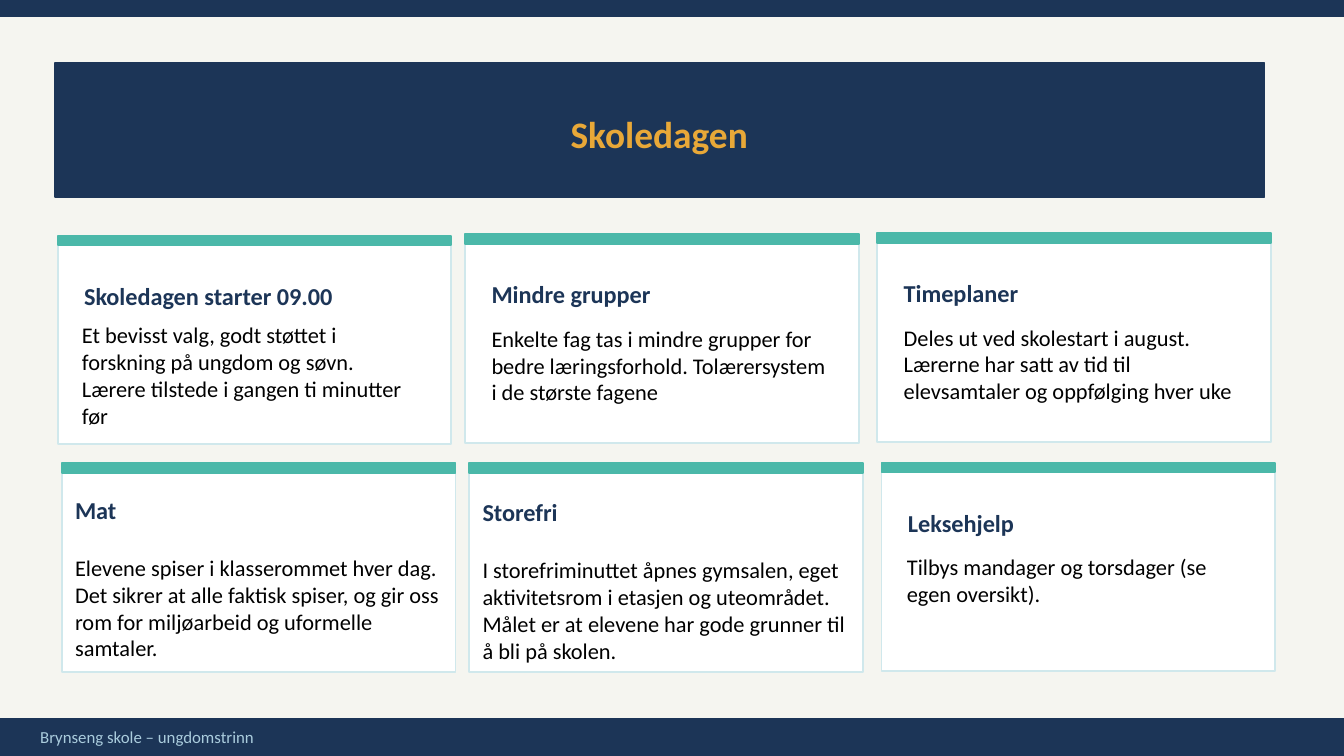
import pptx
import pptx.util
import pptx.dml.color
import pptx.enum.shapes
import pptx.enum.text

Cm, Pt = pptx.util.Cm, pptx.util.Pt
ANCHOR = pptx.enum.text.MSO_ANCHOR
ALIGN = pptx.enum.text.PP_ALIGN

# Content: one row of cards per list; "inside" cards hold their text in the frame
TITLE = "Skoledagen"
FOOTER = "Brynseng skole – ungdomstrinn"
CARDS = [
    [
        {"heading": "Skoledagen starter 09.00",
         "body": ["Et bevisst valg, godt støttet i forskning på ungdom og søvn.",
                  "Lærere tilstede i gangen ti minutter før"],
         "body_at": (0.46, 1.62)},
        {"heading": "Mindre grupper",
         "body": ["Enkelte fag tas i mindre grupper for bedre læringsforhold. "
                  "Tolærersystem i de største fagene"]},
        {"heading": "Timeplaner",
         "body": ["Deles ut ved skolestart i august.",
                  "Lærerne har satt av tid til elevsamtaler og oppfølging hver uke"]},
    ],
    [
        {"heading": "Mat",
         "body": ["Elevene spiser i klasserommet hver dag. Det sikrer at alle faktisk "
                  "spiser, og gir oss rom for miljøarbeid og uformelle samtaler."],
         "inside": 0.6},
        {"heading": "Storefri",
         "body": ["I storefriminuttet åpnes gymsalen, eget aktivitetsrom i etasjen og "
                  "uteområdet. Målet er at elevene har gode grunner til å bli på skolen."],
         "inside": 0.64},
        {"heading": "Leksehjelp",
         "body": ["Tilbys mandager og torsdager (se egen oversikt)."],
         "body_at": (0.48, 1.71)},
    ],
]

# Formats and layout in centimetres
NAVY, TEAL, WHITE, PALE = "1C3557", "4BB8A9", "FFFFFF", "D0E8EC"
FORMATS = {
    "title": {"size": Pt(20), "bold": True, "color": "E8A838"},
    "heading": {"size": Pt(13), "bold": True, "color": NAVY},
    "body": {"size": Pt(12), "bold": False, "color": "000000"},
    "footer": {"size": Pt(9), "bold": False, "color": "AACCDD"},
}
COLUMNS = [1.09, 8.79, 16.58]
ROW_SHIFT = 0.08
ROW_TOPS = [[4.46, 4.43, 4.41], [8.76, 8.76, 8.75]]
CARD_WIDTH, CARD_HEIGHT, BAR_HEIGHT = 7.44, 3.94, 0.18
HEADING_AT, BODY_AT = (0.5, 0.72), (0.5, 1.71)


def rgb(color):
    return pptx.dml.color.RGBColor.from_string(color)


def add_block(page, left, top, width, height, fill, line):
    block = page.shapes.add_shape(pptx.enum.shapes.MSO_SHAPE.RECTANGLE,
                                  Cm(left), Cm(top), Cm(width), Cm(height))
    block.shadow.inherit = False
    block.fill.solid()
    block.fill.fore_color.rgb = rgb(fill)
    block.line.color.rgb = rgb(line)
    block.line.width = Pt(1)
    return block


def write(frame, entries, anchor, insets, align=ALIGN.LEFT):
    """Fill a text frame with (text, format name, space before) entries."""
    frame.word_wrap = True
    frame.vertical_anchor = anchor
    for side, inset in zip(("left", "top", "right", "bottom"), insets):
        setattr(frame, f"margin_{side}", Cm(inset))
    for index, (text, style, space) in enumerate(entries):
        para = frame.paragraphs[0] if index == 0 else frame.add_paragraph()
        para.alignment = align
        if space:
            para.space_before = Pt(space)
        span = para.add_run()
        span.text = text
        span.font.name = "Calibri"
        for key, value in FORMATS[style].items():
            if key == "color":
                span.font.color.rgb = rgb(value)
            else:
                setattr(span.font, key, value)


def add_text(page, left, top, width, height, lines, style,
             anchor=ANCHOR.MIDDLE, align=ALIGN.LEFT):
    box = page.shapes.add_textbox(Cm(left), Cm(top), Cm(width), Cm(height))
    write(box.text_frame, [(line, style, 0) for line in lines],
          anchor, (0, 0, 0, 0), align)


def add_card(page, left, top, card):
    frame = add_block(page, left, top, CARD_WIDTH, CARD_HEIGHT, WHITE, PALE)
    add_block(page, left, top, CARD_WIDTH, BAR_HEIGHT, TEAL, TEAL)
    if "inside" in card:
        entries = [(card["heading"], "heading", 0)]
        entries += [(line, "body", 15.9) for line in card["body"]]
        write(frame.text_frame, entries, ANCHOR.TOP,
              (0.25, card["inside"], 0.25, 0.13))
        return
    dx, dy = HEADING_AT
    add_text(page, left + dx, top + dy, 6.35, 0.81, [card["heading"]], "heading")
    dx, dy = card.get("body_at", BODY_AT)
    add_text(page, left + dx, top + dy, 6.43, 1.8, card["body"], "body", ANCHOR.TOP)


def main():
    deck = pptx.Presentation()
    deck.slide_width, deck.slide_height = Cm(25.4), Cm(14.29)
    page = deck.slides.add_slide(deck.slide_layouts[6])
    page.background.fill.solid()
    page.background.fill.fore_color.rgb = rgb("F5F5F0")

    # Top strip, footer and title banner
    add_block(page, 0, 0, 25.4, 0.3, NAVY, NAVY)
    add_block(page, 0, 13.59, 25.4, 0.7, NAVY, NAVY)
    add_text(page, 0.76, 13.62, 23.88, 0.61, [FOOTER], "footer")
    add_block(page, 1.04, 1.19, 22.86, 2.54, NAVY, NAVY)
    add_text(page, 1.54, 1.25, 21.84, 2.54, [TITLE], "title", align=ALIGN.CENTER)

    # Card grid, the lower row set slightly to the right
    for row, cards in enumerate(CARDS):
        for left, top, card in zip(COLUMNS, ROW_TOPS[row], cards):
            add_card(page, left + row * ROW_SHIFT, top, card)

    deck.save("out.pptx")


if __name__ == "__main__":
    main()
